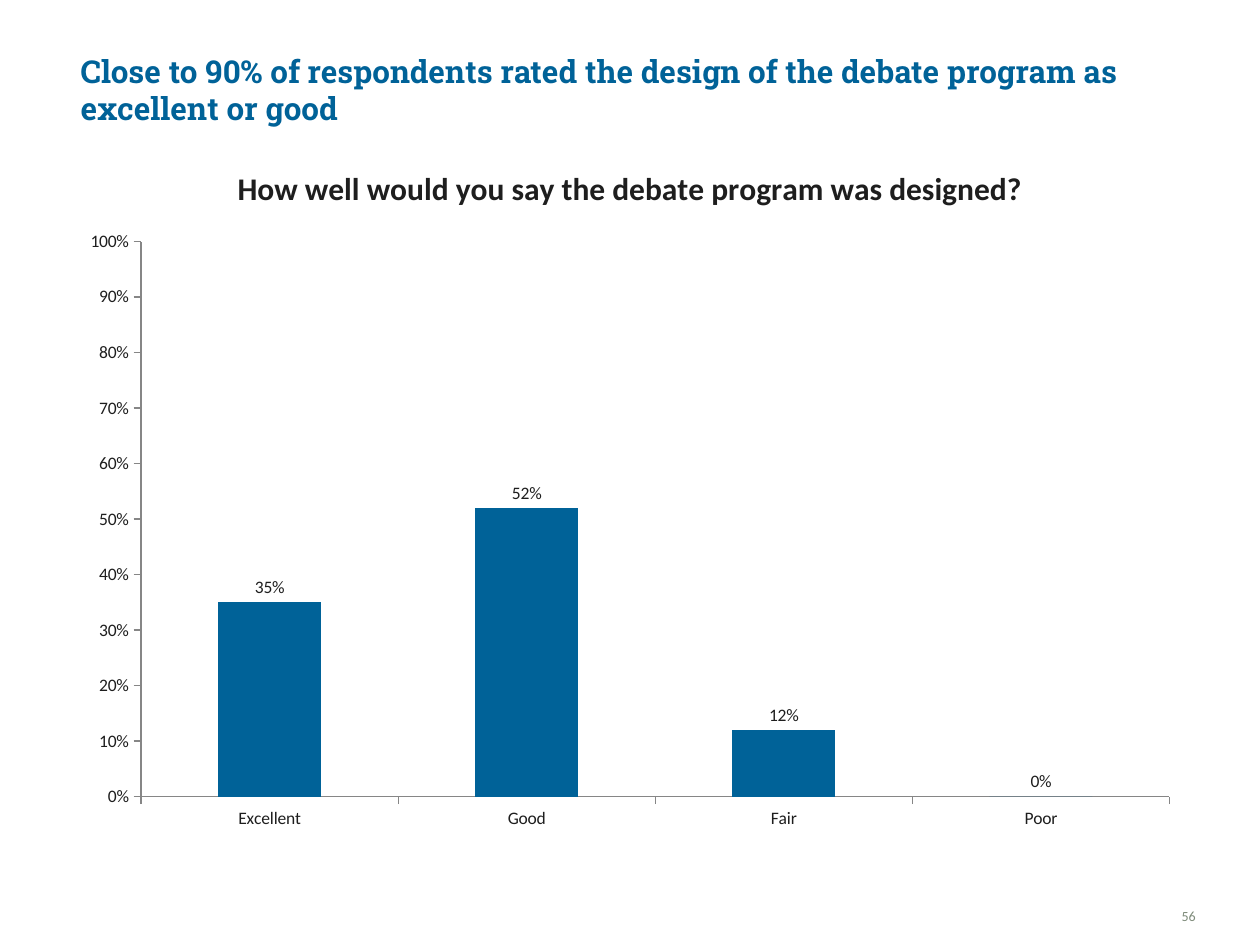
import pptx
import pptx.chart.data
import pptx.dml.color
import pptx.enum.chart
import pptx.enum.text
import pptx.util
from dataclasses import dataclass

Pt = pptx.util.Pt
Align = pptx.enum.text.PP_ALIGN
Anchor = pptx.enum.text.MSO_ANCHOR
Tick = pptx.enum.chart.XL_TICK_MARK


@dataclass
class Theme:
    blue: str = "006298"
    ink: str = "1E1E1E"
    muted: str = "7E8B7A"
    rule: str = "868686"
    head: str = "Roboto Slab"
    body: str = "Calibri"
    large: int = 18
    base: int = 10
    small: int = 8


def color(code):
    return pptx.dml.color.RGBColor.from_string(code)


class Page:
    """Holds the theme and slide; places are shares of the slide's size."""

    def __init__(self, deck, theme):
        self.deck, self.theme = deck, theme
        self.slide = deck.slides.add_slide(deck.slide_layouts[5])

    def place(self, x, y, w, h):
        wide, high = self.deck.slide_width, self.deck.slide_height
        return int(x * wide), int(y * high), int(w * wide), int(h * high)

    def style(self, font, size, code, face, bold=False):
        font.size, font.name, font.bold = Pt(size), face, bold
        font.color.rgb = color(code)

    def title(self, text, *area):
        box = self.slide.shapes.title
        box.left, box.top, box.width, box.height = self.place(*area)
        frame = box.text_frame
        frame.text = text
        frame.word_wrap = True
        frame.auto_size = pptx.enum.text.MSO_AUTO_SIZE.NONE
        frame.vertical_anchor = Anchor.TOP
        line = frame.paragraphs[0]
        line.alignment = Align.LEFT
        look = self.theme
        self.style(line.runs[0].font, look.large, look.blue, look.head, True)

    def number(self, text, *area):
        frame = self.slide.shapes.add_textbox(*self.place(*area)).text_frame
        frame.text = text
        frame.word_wrap = True
        frame.vertical_anchor = Anchor.BOTTOM
        frame.margin_left = frame.margin_right = 0
        frame.margin_top = frame.margin_bottom = 0
        line = frame.paragraphs[0]
        line.alignment = Align.RIGHT
        look = self.theme
        self.style(line.runs[0].font, look.small, look.muted, look.body)

    def columns(self, title, shares, *area):
        look = self.theme
        data = pptx.chart.data.CategoryChartData(number_format="0%")
        data.categories = list(shares)
        data.add_series("Series 1", list(shares.values()))
        kind = pptx.enum.chart.XL_CHART_TYPE.COLUMN_CLUSTERED
        chart = self.slide.shapes.add_chart(kind, *self.place(*area), data).chart
        self.style(chart.font, look.base, look.ink, look.body)
        chart.has_legend = False
        chart.has_title = True
        frame = chart.chart_title.text_frame
        frame.text = title
        run = frame.paragraphs[0].runs[0]
        self.style(run.font, look.large, look.ink, look.body, True)

        for axis in (chart.category_axis, chart.value_axis):
            axis.has_major_gridlines = False
            axis.major_tick_mark = Tick.OUTSIDE
            axis.minor_tick_mark = Tick.NONE
            axis.format.line.color.rgb = color(look.rule)
            axis.format.line.width = Pt(0.75)
        scale = chart.value_axis
        scale.minimum_scale, scale.maximum_scale = 0, 1
        scale.major_unit = 0.1
        scale.tick_labels.number_format = "0%"
        scale.tick_labels.number_format_is_linked = False

        plot = chart.plots[0]
        plot.gap_width = 150
        plot.vary_by_categories = False
        fill = plot.series[0].format.fill
        fill.solid()
        fill.fore_color.rgb = color(look.blue)
        plot.has_data_labels = True
        labels = plot.data_labels
        labels.show_value = True
        labels.number_format = "0%"
        labels.number_format_is_linked = False
        labels.position = pptx.enum.chart.XL_LABEL_POSITION.OUTSIDE_END
        self.style(labels.font, look.base, look.ink, look.body)


def main():
    deck = pptx.Presentation()
    deck.slide_width = pptx.util.Inches(10)
    deck.slide_height = pptx.util.Inches(7.5)
    page = Page(deck, Theme())
    page.title(
        "Close to 90% of respondents rated the design of the debate program "
        "as excellent or good",
        0.054, 0.048, 0.867, 0.093)
    page.columns(
        "How well would you say the debate program was designed?",
        {"Excellent": 0.35, "Good": 0.52, "Fair": 0.12, "Poor": 0},
        0.054, 0.148, 0.892, 0.744)
    page.number("56", 0.897, 0.943, 0.052, 0.035)
    deck.save("out.pptx")


if __name__ == "__main__":
    main()
